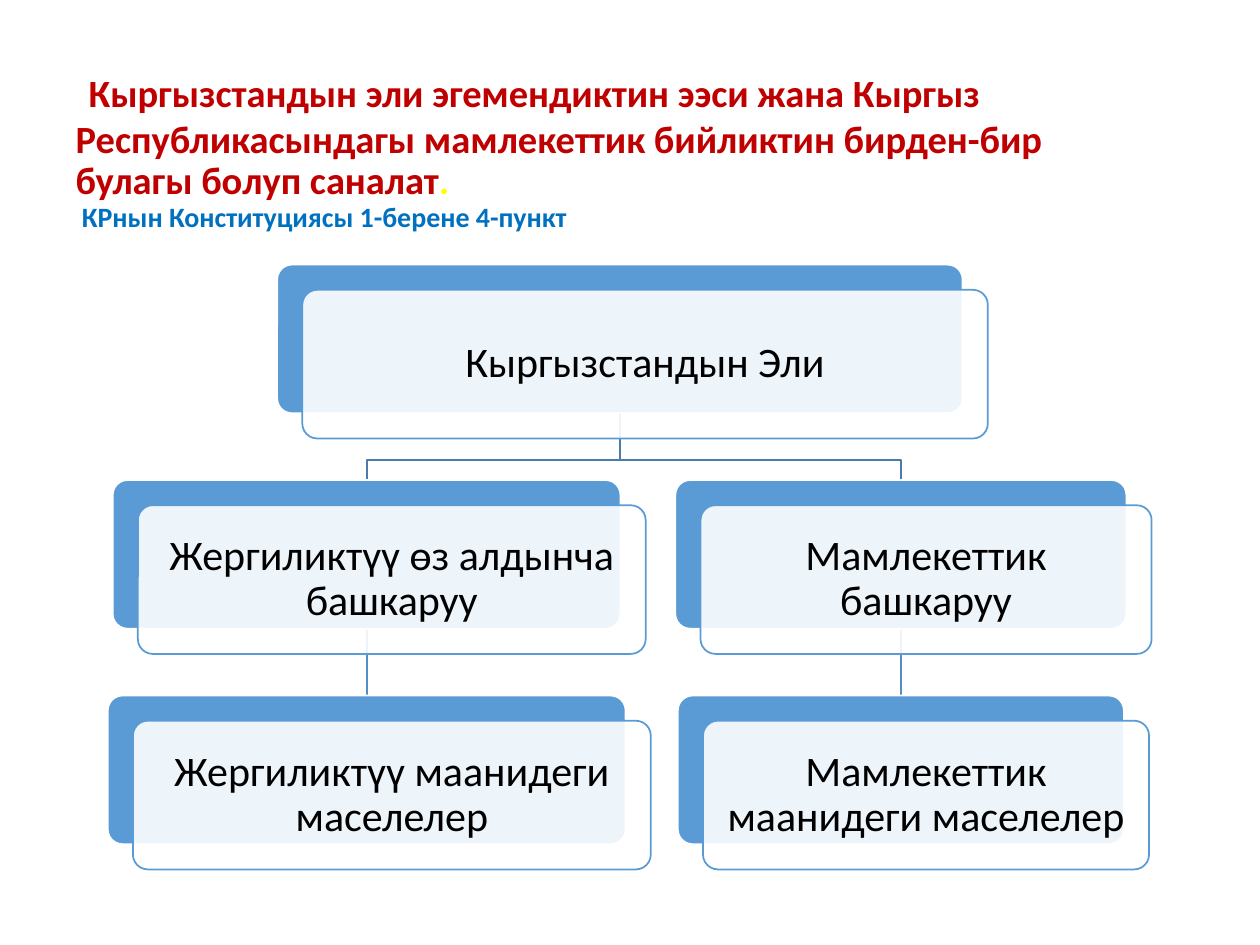
from dataclasses import dataclass

from lxml.etree import SubElement
from pptx import Presentation
from pptx.dml.color import RGBColor
from pptx.enum.shapes import MSO_CONNECTOR, MSO_SHAPE
from pptx.enum.text import MSO_ANCHOR, MSO_AUTO_SIZE, PP_ALIGN
from pptx.oxml.ns import qn
from pptx.util import Inches, Pt


@dataclass(frozen=True)
class Theme:
    font: str = "Calibri"
    blue: str = "5B9BD5"
    white: str = "FFFFFF"
    black: str = "000000"
    red: str = "C00000"
    yellow: str = "FFFF00"
    cite: str = "0070C0"
    fork: str = "497CAB"
    stem: str = "538DC1"
    lead_size: int = 33
    head_size: int = 22
    cite_size: int = 16
    box_size: int = 24
    alpha: int = 90


@dataclass(frozen=True)
class Node:
    text: str
    mid: float
    width: float
    row: int

    @property
    def top(self) -> float:
        return TOP + self.row * (HIGH + GAP)


THEME = Theme()
TOP, HIGH, GAP, SHIFT = 2.1, 1.18, 0.53, 0.2
BEND = 0.37  # drop from the root to the crossbar
LEFT, RIGHT = 2.91, 7.15

ROOT = Node("Кыргызстандын Эли", 4.92, 5.44, 0)
PAIRS = [
    (Node("Жергиликтүү өз алдынча башкаруу", LEFT, 4.03, 1),
     Node("Жергиликтүү маанидеги маселелер", LEFT, 4.11, 2)),
    (Node("Мамлекеттик башкаруу", RIGHT, 3.58, 1),
     Node("Мамлекеттик маанидеги маселелер", RIGHT, 3.54, 2)),
]


def apply(thing, values: dict) -> None:
    for name, value in values.items():
        setattr(thing, name, value)


def style(run, size: int, color: str, bold: bool = False) -> None:
    apply(run.font, {"name": THEME.font, "size": Pt(size), "bold": bold})
    run.font.color.rgb = RGBColor.from_string(color)


def ink(line, color: str) -> None:
    line.color.rgb = RGBColor.from_string(color)
    line.width = Pt(1)


def add_panel(slide, node: Node, shift: float, fill: str, edge: str):
    panel = slide.shapes.add_shape(
        MSO_SHAPE.ROUNDED_RECTANGLE,
        Inches(node.mid - node.width / 2 + shift), Inches(node.top + shift),
        Inches(node.width), Inches(HIGH))
    panel.adjustments[0] = 0.1
    panel.shadow.inherit = False
    panel.fill.solid()
    panel.fill.fore_color.rgb = RGBColor.from_string(fill)
    ink(panel.line, edge)
    return panel


def add_node(slide, node: Node):
    """Draw the solid back panel and the sheer front card with its text."""
    back = add_panel(slide, node, 0, THEME.blue, THEME.white)
    card = add_panel(slide, node, SHIFT, THEME.white, THEME.blue)
    tint = card.fill._xPr.find(qn("a:solidFill"))[0]
    SubElement(tint, qn("a:alpha"), val=str(THEME.alpha * 1000))
    frame = card.text_frame
    pad = Inches(0.13)
    apply(frame, {"word_wrap": True, "vertical_anchor": MSO_ANCHOR.MIDDLE,
                  "margin_left": pad, "margin_right": pad,
                  "margin_top": pad, "margin_bottom": pad})
    para = frame.paragraphs[0]
    apply(para, {"alignment": PP_ALIGN.CENTER, "line_spacing": 0.9})
    run = para.add_run()
    run.text = node.text
    style(run, THEME.box_size, THEME.black)
    return back


def add_fork(slide, child: Node) -> None:
    """Draw the bent line from the root down to a child."""
    start = ROOT.top + HIGH
    bar = start + BEND
    pen = slide.shapes.build_freeform(Inches(ROOT.mid), Inches(start))
    pen.add_line_segments(
        [(Inches(x), Inches(y)) for x, y in
         ((ROOT.mid, bar), (child.mid, bar), (child.mid, child.top))],
        close=False)
    fork = pen.convert_to_shape()
    fork.shadow.inherit = False
    fork.fill.background()
    ink(fork.line, THEME.fork)


def add_stem(slide, upper, lower) -> None:
    """Join two boxes by a straight line that lies behind them."""
    stem = slide.shapes.add_connector(MSO_CONNECTOR.STRAIGHT, 0, 0, 0, 0)
    stem.begin_connect(upper, 2)
    stem.end_connect(lower, 0)
    ink(stem.line, THEME.stem)
    SubElement(stem._element.spPr, qn("a:effectLst"))
    upper._element.addprevious(stem._element)


def add_title(slide) -> None:
    title = slide.shapes.title
    apply(title, {"left": Inches(0.5), "top": Inches(0.37),
                  "width": Inches(8.28), "height": Inches(1.57)})
    apply(title.text_frame, {"word_wrap": True,
                             "auto_size": MSO_AUTO_SIZE.NONE,
                             "vertical_anchor": MSO_ANCHOR.MIDDLE})
    para = title.text_frame.paragraphs[0]
    apply(para, {"alignment": PP_ALIGN.LEFT, "line_spacing": 0.9})
    head = ("Кыргызстандын эли эгемендиктин ээси жана Кыргыз "
            "Республикасындагы мамлекеттик бийликтин бирден-бир "
            "булагы болуп саналат")
    parts = [
        (" ", THEME.lead_size, THEME.black, False),
        (head, THEME.head_size, THEME.red, True),
        (".", THEME.head_size, THEME.yellow, True),
        (" КРнын Конституциясы 1-берене 4-пункт",
         THEME.cite_size, THEME.cite, True),
    ]
    for text, size, color, bold in parts:
        if size == THEME.cite_size:
            para.add_line_break()
            SubElement(para._p[-1], qn("a:rPr"),
                       sz=str(THEME.head_size * 100))
        run = para.add_run()
        run.text = text
        style(run, size, color, bold)


def main() -> None:
    deck = Presentation()
    deck.slide_width, deck.slide_height = Inches(10), Inches(7.5)
    slide = deck.slides.add_slide(deck.slide_layouts[5])
    add_title(slide)
    # Lines from the root, then the boxes over them
    for child, _ in PAIRS:
        add_fork(slide, child)
    add_node(slide, ROOT)
    for pair in PAIRS:
        upper, lower = [add_node(slide, node) for node in pair]
        add_stem(slide, upper, lower)
    deck.save("out.pptx")


if __name__ == "__main__":
    main()
